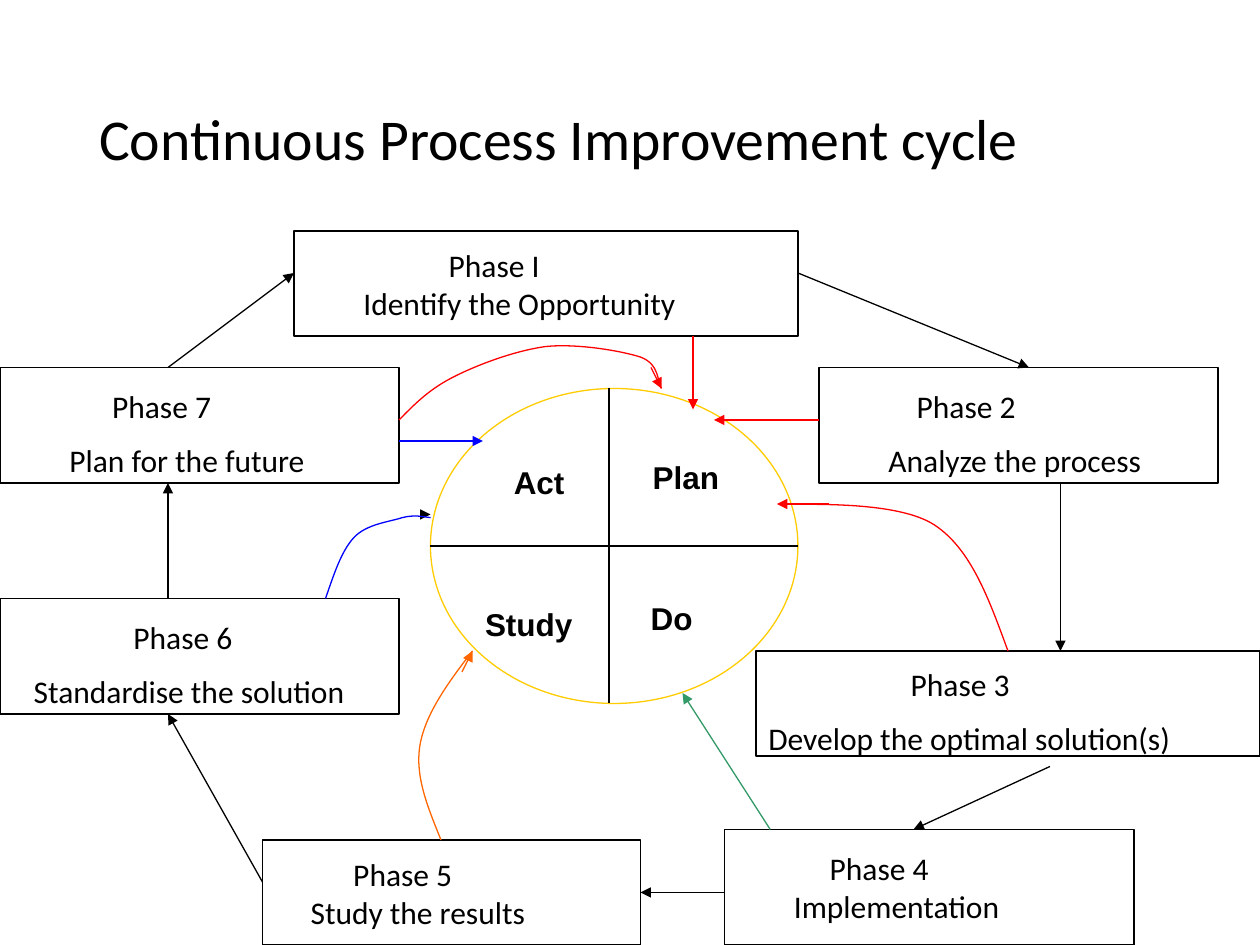
from dataclasses import dataclass

from lxml import etree
from pptx import Presentation
from pptx import util as u
from pptx.dml.color import RGBColor
from pptx.enum import shapes, text
from pptx.oxml.ns import qn


@dataclass(frozen=True)
class Theme:
    black: str = "000000"
    white: str = "FFFFFF"
    gold: str = "FFCC00"
    red: str = "FF0000"
    orange: str = "FF6600"
    blue: str = "0000FF"
    green: str = "339966"
    body_font: str = "Calibri"
    wheel_font: str = "Arial"
    title_size: int = 33
    body_size: int = 18
    line_width: float = 0.75


T = Theme()
CELL = 2.54 / 12

PHASES = {
    1: ((28, 22, 48, 10), ("Phase I", 2.87), ("Identify the Opportunity", 1.15), False),
    2: ((78, 35, 38, 11), ("Phase 2", 1.72), ("Analyze the process", 1.15), True),
    3: ((72, 62, 48, 10), ("Phase 3", 2.87), ("Develop the optimal solution(s)", 0), True),
    4: ((69, 79, 39, 11), ("Phase 4", 1.87), ("Implementation", 1.15), False),
    5: ((25, 80, 36, 10), ("Phase 5", 1.58), ("Study the results", 0.72), False),
    6: ((0, 57, 38, 11), ("Phase 6", 2.44), ("Standardise the solution", 0.43), True),
    7: ((0, 35, 38, 11), ("Phase 7", 2.01), ("Plan for the future", 1.15), True),
}
CYCLE_ARROWS = [
    ((76, 26), (98, 35)),
    ((101, 46), (101, 62)),
    ((100, 73), (87, 79)),
    ((25, 84), (16, 68)),
    ((16, 57), (16, 46)),
    ((16, 35), (28, 26)),
]
WHEEL_ARROWS = [
    ((66, 32), (66, 39), T.red),
    ((78, 40), (68, 40), T.red),
    ((79, 48), (74, 48), T.red),
    ((62, 35), (63, 37), T.red),
    ((73.36, 79), (65, 66), T.green),
    ((44, 64), (45, 62), T.orange),
    ((40, 49), (41, 49), T.black),
    ((38, 42), (46, 42), T.blue),
]
WHEEL_CURVES = [
    (T.red, [(38, 40), (39.3, 38.7), (40.7, 37.2), (43, 36), (45.3, 34.8), (49, 33.4), (52, 33),
             (55, 32.7), (59.1, 33.4), (61, 34), (62.9, 34.7), (62.6, 36.5), (63, 37)]),
    (T.blue, [(31, 57), (31.8, 54.7), (32.5, 52.5), (33.7, 51.2), (34.9, 49.9), (37.1, 49.7),
              (38.3, 49.3), (39.5, 49), (40.2, 49.2), (41, 49.3)]),
    (T.red, [(96, 62), (94.2, 57.1), (92.5, 52.3), (89, 50), (85.5, 47.7), (77.2, 48.1), (75, 48)]),
    (T.orange, [(42, 80), (40.8, 77), (39.5, 74), (40, 71), (40.5, 68), (42.7, 65), (45, 62)]),
]


def grid(*cells):
    return [u.Cm(n * CELL) for n in cells]


def set_line(sp, color):
    sp.line.color.rgb = RGBColor.from_string(color)
    sp.line.width = u.Pt(T.line_width)


def add_run(p, words, font, size, bold=False):
    r = p.add_run()
    r.text = words
    r.font.name = font
    r.font.size = u.Pt(size)
    r.font.bold = bold
    r.font.color.rgb = RGBColor.from_string(T.black)


def add_outline(s, kind, box, color):
    sp = s.shapes.add_shape(kind, *grid(*box))
    sp.shadow.inherit = False
    sp.fill.solid()
    sp.fill.fore_color.rgb = RGBColor.from_string(T.white)
    set_line(sp, color)
    return sp


def add_line(s, start, end, color=T.black, arrow=True):
    sp = s.shapes.add_connector(shapes.MSO_CONNECTOR.STRAIGHT, *grid(*start, *end))
    set_line(sp, color)
    if arrow:
        etree.SubElement(sp.line._get_or_add_ln(), qn("a:tailEnd"), type="triangle")
    etree.SubElement(sp._element.spPr, qn("a:effectLst"))
    return sp


def add_curve(s, color, points):
    track = [grid(*point) for point in points]
    builder = s.shapes.build_freeform(*track[0], scale=1.0)
    builder.add_line_segments(track[1:], close=False)
    sp = builder.convert_to_shape()
    sp.shadow.inherit = False
    sp.fill.background()
    set_line(sp, color)
    outline = next(sp._element.iter(qn("a:path")))
    segments = outline.findall(qn("a:lnTo"))
    for i in range(0, len(segments), 3):
        bezier = etree.SubElement(outline, qn("a:cubicBezTo"))
        for segment in segments[i:i + 3]:
            bezier.append(segment[0])
            outline.remove(segment)


def add_title(s, left, top, width, height):
    sp = s.shapes.add_textbox(u.Cm(left), u.Cm(top), u.Cm(width), u.Cm(height))
    tf = sp.text_frame
    tf.word_wrap = True
    tf.vertical_anchor = text.MSO_ANCHOR.MIDDLE
    p = tf.paragraphs[0]
    p.line_spacing = 0.9
    add_run(p, "Continuous Process Improvement cycle", T.body_font, T.title_size)


def add_wheel(s, left, top, width, height):
    add_outline(s, shapes.MSO_SHAPE.OVAL, (left, top, width, height), T.gold)
    x, y = left + 17, top + height / 2
    add_line(s, (x, top), (x, top + height), arrow=False)
    add_line(s, (left, y), (left + width, y), arrow=False)
    x0, y0 = grid(left, top)
    for words, dx, dy, w in (("Act", 1.43, 1.38, 1.54), ("Plan", 4.23, 1.27, 1.86),
                             ("Do", 4.19, 4.12, 1.36), ("Study", 0.85, 4.23, 3.33)):
        sp = s.shapes.add_textbox(x0 + u.Cm(dx), y0 + u.Cm(dy), u.Cm(w), u.Cm(1.02))
        tf = sp.text_frame
        tf.word_wrap = words == "Study"
        tf.auto_size = text.MSO_AUTO_SIZE.SHAPE_TO_FIT_TEXT
        add_run(tf.paragraphs[0], words, T.wheel_font, T.body_size, True)


def add_phase(s, box, heading, detail, spaced):
    sp = add_outline(s, shapes.MSO_SHAPE.RECTANGLE, box, T.black)
    tf = sp.text_frame
    tf.word_wrap = True
    tf.vertical_anchor = text.MSO_ANCHOR.MIDDLE
    tf.margin_top = u.Cm(0.3 if spaced else 0)
    tf.margin_bottom = 0
    for p, (words, indent) in zip((tf.paragraphs[0], tf.add_paragraph()), (heading, detail)):
        p.alignment = text.PP_ALIGN.LEFT
        p._p.get_or_add_pPr().set("marL", str(u.Cm(indent)))
        add_run(p, words, T.body_font, T.body_size)
    if spaced:
        tf.paragraphs[0].space_after = u.Pt(T.body_size / 2)
    return sp


def main():
    prs = Presentation()
    prs.slide_width, prs.slide_height = grid(120, 90)
    s = prs.slides.add_slide(prs.slide_layouts[6])
    add_title(s, 1.75, 1.01, 21.9, 3.68)
    add_wheel(s, 41, 37, 35, 30)
    phases = {n: add_phase(s, *parts) for n, parts in PHASES.items()}
    for start, end in CYCLE_ARROWS:
        add_line(s, start, end)
    add_line(s, (69, 85), (61, 85)).end_connect(phases[5], 3)
    for start, end, color in WHEEL_ARROWS:
        add_line(s, start, end, color)
    for color, points in WHEEL_CURVES:
        add_curve(s, color, points)
    prs.save("out.pptx")


if __name__ == "__main__":
    main()
